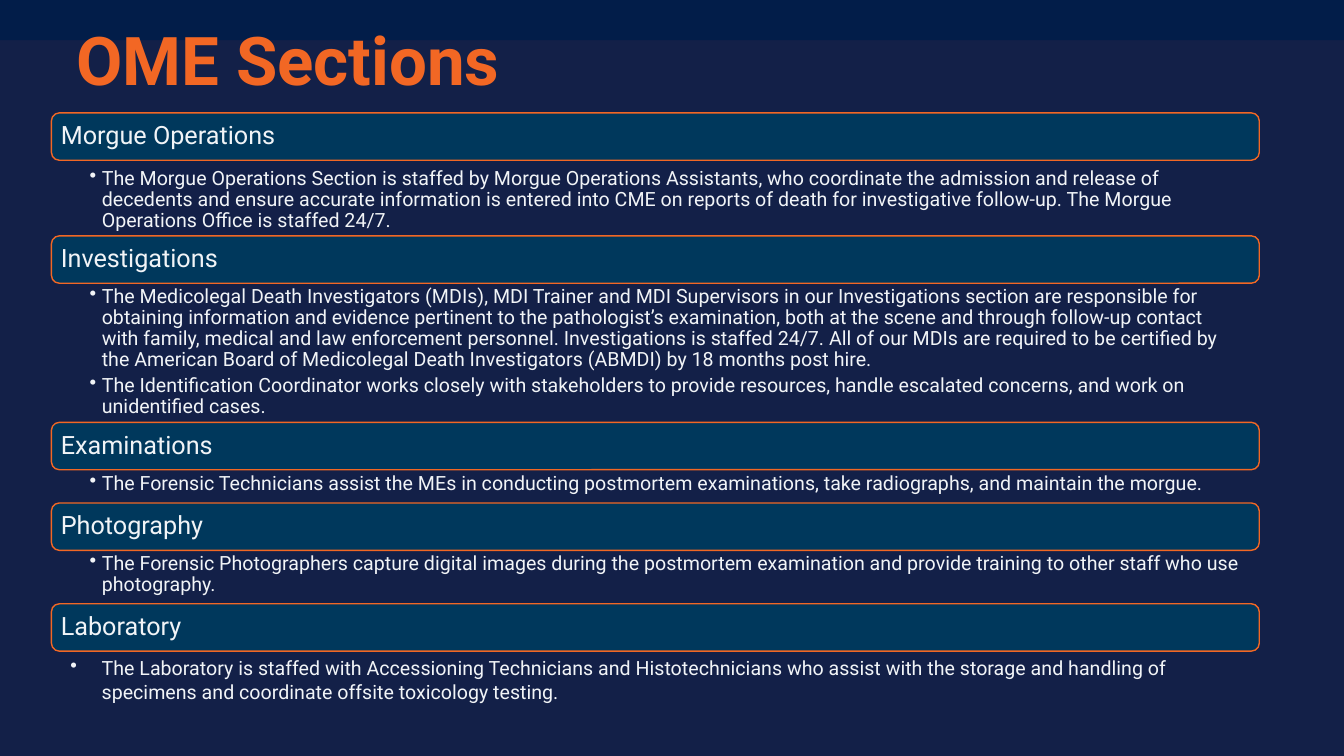
"""Build the OME Sections slide: five section bars, each with its bulleted description."""
from dataclasses import dataclass

import lxml.etree
import pptx
import pptx.dml.color
import pptx.enum.shapes
import pptx.enum.text
import pptx.oxml.ns
import pptx.slide
import pptx.text.text
import pptx.util

EMU_PER_PX = 9144
SLIDE_WIDTH, SLIDE_HEIGHT = 1333, 750
BAR_LEFT, BAR_WIDTH, BAR_HEIGHT = 51, 1198, 47
FONT = "Roboto"

NAVY = pptx.dml.color.RGBColor(0x13, 0x20, 0x48)
DEEP_NAVY = pptx.dml.color.RGBColor(0x02, 0x1D, 0x49)
TEAL = pptx.dml.color.RGBColor(0x00, 0x38, 0x5C)
ORANGE = pptx.dml.color.RGBColor(0xF2, 0x67, 0x24)
PALE = pptx.dml.color.RGBColor(0xF1, 0xF4, 0xF7)


@dataclass(frozen=True)
class BulletStyle:
    """Placement of bulleted text within the slide, in px."""

    left: int
    width: int
    insets: tuple[int, int, int, int]
    indent: int
    level: int
    line_spacing: float
    space_after: int


@dataclass(frozen=True)
class Section:
    """A section bar and the description below it, in px."""

    name: str
    bar_top: int
    text_top: int
    text_height: int
    bullets: tuple[str, ...]
    style: BulletStyle


NESTED = BulletStyle(BAR_LEFT, BAR_WIDTH, (38, 3, 14, 3), 12, 1, 0.9, 3)
PLAIN = BulletStyle(60, 1189, (10, 5, 10, 5), 31, 0, 1.0, 0)

SECTIONS = (
    Section("Morgue Operations", 112, 164, 69, (
        "The Morgue Operations Section is staffed by Morgue Operations Assistants, who coordinate "
        "the admission and release of decedents and ensure accurate information is entered into CME "
        "on reports of death for investigative follow-up. The Morgue Operations Office is staffed 24/7.",
    ), NESTED),
    Section("Investigations", 234, 281, 139, (
        "The Medicolegal Death Investigators (MDIs), MDI Trainer and MDI Supervisors in our "
        "Investigations section are responsible for obtaining information and evidence pertinent to "
        "the pathologist’s examination, both at the scene and through follow-up contact with family, "
        "medical and law enforcement personnel. Investigations is staffed 24/7. All of our MDIs are "
        "required to be certified by the American Board of Medicolegal Death Investigators (ABMDI) "
        "by 18 months post hire.",
        "The Identification Coordinator works closely with stakeholders to provide resources, handle "
        "escalated concerns, and work on unidentified cases.",
    ), NESTED),
    Section("Examinations", 419, 467, 33, (
        "The Forensic Technicians assist the MEs in conducting postmortem examinations, take "
        "radiographs, and maintain the morgue.",
    ), NESTED),
    Section("Photography", 499, 546, 48, (
        "The Forensic Photographers capture digital images during the postmortem examination and "
        "provide training to other staff who use photography.",
    ), NESTED),
    Section("Laboratory", 599, 646, 57, (
        "The Laboratory is staffed with Accessioning Technicians and Histotechnicians who assist "
        "with the storage and handling of specimens and coordinate offsite toxicology testing.",
    ), PLAIN),
)


def px(length: int) -> pptx.util.Emu:
    """Turn px into EMU."""
    return pptx.util.Emu(length * EMU_PER_PX)


def set_insets(frame: pptx.text.text.TextFrame, insets: tuple[int, int, int, int]) -> None:
    """Set the left, top, right and bottom margins of a text frame."""
    frame.margin_left, frame.margin_top, frame.margin_right, frame.margin_bottom = map(px, insets)


def set_font(paragraph: pptx.text.text._Paragraph, size: int,
             color: pptx.dml.color.RGBColor, bold: bool = False) -> None:
    """Format the text of a paragraph."""
    paragraph.font.name = FONT
    paragraph.font.size = pptx.util.Pt(size)
    paragraph.font.bold = bold
    paragraph.font.color.rgb = color


def add_band(slide: pptx.slide.Slide) -> None:
    """Draw the dark band along the top, behind the title."""
    band = slide.shapes.add_shape(
        pptx.enum.shapes.MSO_SHAPE.RECTANGLE, 0, 0, px(SLIDE_WIDTH), px(40))
    band.shadow.inherit = False
    band.fill.solid()
    band.fill.fore_color.rgb = DEEP_NAVY
    band.line.fill.background()
    slide.shapes._spTree.insert(2, band._element)


def format_title(slide: pptx.slide.Slide) -> None:
    """Place and format the slide title."""
    title = slide.shapes.title
    title.left, title.top, title.width, title.height = map(px, (66, 0, 516, 126))
    frame = title.text_frame
    frame.text = "OME Sections"
    frame.auto_size = pptx.enum.text.MSO_AUTO_SIZE.NONE
    frame.vertical_anchor = pptx.enum.text.MSO_ANCHOR.MIDDLE
    heading = frame.paragraphs[0]
    heading.alignment = pptx.enum.text.PP_ALIGN.LEFT
    heading.line_spacing = 0.9
    heading.space_after = pptx.util.Pt(6)
    set_font(heading, 48, ORANGE, bold=True)


def add_bar(slide: pptx.slide.Slide, section: Section) -> None:
    """Draw the rounded bar that names a section."""
    bar = slide.shapes.add_shape(
        pptx.enum.shapes.MSO_SHAPE.ROUNDED_RECTANGLE,
        px(BAR_LEFT), px(section.bar_top), px(BAR_WIDTH), px(BAR_HEIGHT))
    bar.shadow.inherit = False
    bar.fill.solid()
    bar.fill.fore_color.rgb = TEAL
    bar.line.color.rgb = ORANGE
    bar.line.width = pptx.util.Pt(1)
    frame = bar.text_frame
    frame.text = section.name
    frame.vertical_anchor = pptx.enum.text.MSO_ANCHOR.MIDDLE
    set_insets(frame, (7, 5, 7, 5))
    name = frame.paragraphs[0]
    name.alignment = pptx.enum.text.PP_ALIGN.LEFT
    name.line_spacing = 0.9
    set_font(name, 18, PALE)


def add_description(slide: pptx.slide.Slide, section: Section) -> None:
    """Write the bulleted description of a section."""
    style = section.style
    description = slide.shapes.add_textbox(
        px(style.left), px(section.text_top), px(style.width), px(section.text_height))
    frame = description.text_frame
    frame.word_wrap = True
    set_insets(frame, style.insets)
    frame.text = "\n".join(section.bullets)
    for paragraph in frame.paragraphs:
        paragraph.level = style.level
        paragraph.line_spacing = style.line_spacing
        paragraph.space_after = pptx.util.Pt(style.space_after)
        properties = paragraph._p.get_or_add_pPr()
        properties.set("marL", str(px(style.indent)))
        properties.set("indent", str(px(-style.indent)))
        lxml.etree.SubElement(properties, pptx.oxml.ns.qn("a:buChar")).set("char", "•")
        set_font(paragraph, 14, PALE)


def main() -> None:
    """Build and save the slide."""
    deck = pptx.Presentation()
    deck.slide_width, deck.slide_height = px(SLIDE_WIDTH), px(SLIDE_HEIGHT)
    slide = deck.slides.add_slide(deck.slide_layouts.get_by_name("Title Only"))
    slide.background.fill.solid()
    slide.background.fill.fore_color.rgb = NAVY
    add_band(slide)
    format_title(slide)
    for section in SECTIONS:
        add_bar(slide, section)
        add_description(slide, section)
    deck.save("out.pptx")


if __name__ == "__main__":
    main()
